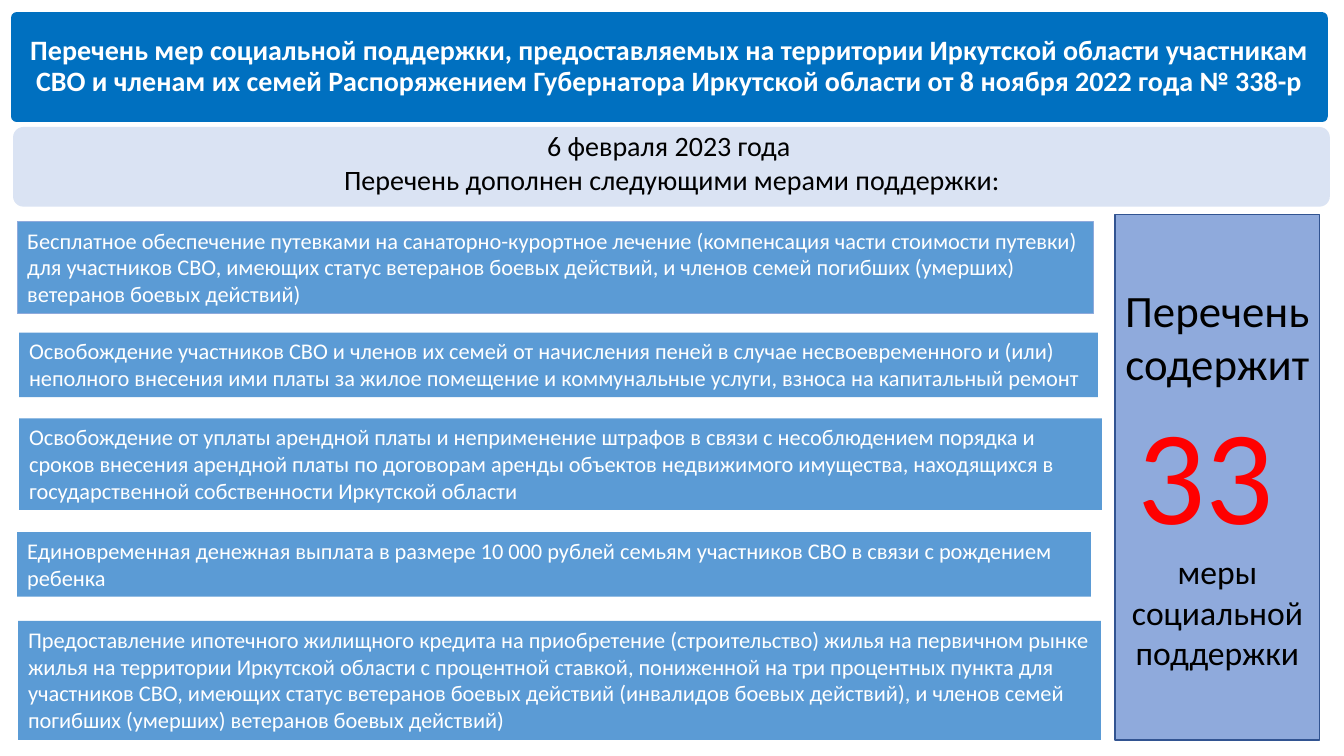
import pptx
import pptx.dml.color
import pptx.enum.shapes
import pptx.enum.text
import pptx.util

RGBColor = pptx.dml.color.RGBColor
Pt = pptx.util.Pt
MSO_SHAPE = pptx.enum.shapes.MSO_SHAPE
ANCHOR = pptx.enum.text.MSO_ANCHOR
ALIGN = pptx.enum.text.PP_ALIGN

PX = 9144  # 100 px to the inch
WHITE = RGBColor(0xFF, 0xFF, 0xFF)
BLACK = RGBColor(0x00, 0x00, 0x00)
RED = RGBColor(0xFF, 0x00, 0x00)
TITLE_BLUE = RGBColor(0x00, 0x70, 0xC0)
PALE_BLUE = RGBColor(0xDA, 0xE3, 0xF3)
MEASURE_BLUE = RGBColor(0x5B, 0x9B, 0xD5)
PANEL_BLUE = RGBColor(0x8F, 0xAA, 0xDC)
PANEL_EDGE = RGBColor(0x32, 0x54, 0x91)


def add_box(kind, box, fill, anchor=ANCHOR.TOP):
    sp = s.shapes.add_shape(kind, *[v * PX for v in box])
    sp.shadow.inherit = False
    sp.fill.solid()
    sp.fill.fore_color.rgb = fill
    sp.line.fill.background()
    sp.text_frame.word_wrap = True
    sp.text_frame.vertical_anchor = anchor
    return sp


def style(p, size, color, align, bold=False):
    p.alignment = align
    p.font.name = "Calibri"
    p.font.size = Pt(size)
    p.font.bold = bold
    p.font.color.rgb = color


prs = pptx.Presentation()
prs.slide_width, prs.slide_height = 1333 * PX, 750 * PX
s = prs.slides.add_slide(prs.slide_layouts[6])

# Title
sp = add_box(MSO_SHAPE.ROUNDED_RECTANGLE, (11, 12, 1306, 109), TITLE_BLUE, ANCHOR.MIDDLE)
sp.adjustments[0] = 0.05
p = sp.text_frame.paragraphs[0]
p.text = (
    "Перечень мер социальной поддержки, предоставляемых на территории Иркутской "
    "области участникам СВО и членам их семей Распоряжением Губернатора Иркутской "
    "области от 8 ноября 2022 года № 338-р"
)
p.line_spacing = 0.9
style(p, 20, WHITE, ALIGN.CENTER, bold=True)

# Date band and its caption
sp = add_box(MSO_SHAPE.ROUNDED_RECTANGLE, (13, 126, 1306, 79), PALE_BLUE)
sp.adjustments[0] = 0.13
sp = s.shapes.add_textbox(0, 123 * PX, 1333 * PX, 77 * PX)
sp.text_frame.word_wrap = True
p = sp.text_frame.paragraphs[0]
p.text = "6 февраля 2023 года \vПеречень дополнен следующими мерами поддержки:"
style(p, 20, BLACK, ALIGN.CENTER)

# Added measures
measures = [
    ((17, 220, 1068, 91),
     "Бесплатное обеспечение путевками на санаторно-курортное лечение (компенсация "
     "части стоимости путевки) для участников СВО, имеющих статус ветеранов боевых "
     "действий, и членов семей погибших (умерших) ветеранов боевых действий)"),
    ((19, 330, 1070, 64),
     "Освобождение участников СВО и членов их семей от начисления пеней в случае "
     "несвоевременного и (или) неполного внесения ими платы за жилое помещение и "
     "коммунальные услуги, взноса на капитальный ремонт"),
    ((19, 415, 1074, 91),
     "Освобождение от уплаты арендной платы и неприменение штрафов в связи с "
     "несоблюдением порядка и сроков внесения арендной платы по договорам аренды "
     "объектов недвижимого имущества, находящихся в государственной собственности "
     "Иркутской области"),
    ((17, 528, 1065, 64),
     "Единовременная денежная выплата в размере 10 000 рублей семьям участников СВО "
     "в связи с рождением ребенка"),
    ((18, 616, 1074, 118),
     "Предоставление ипотечного жилищного кредита на приобретение (строительство) "
     "жилья на первичном рынке жилья на территории Иркутской области с процентной "
     "ставкой, пониженной на три процентных пункта для участников СВО, имеющих статус "
     "ветеранов боевых действий (инвалидов боевых действий), и членов семей погибших "
     "(умерших) ветеранов боевых действий)"),
]
for i, (box, text) in enumerate(measures):
    sp = add_box(MSO_SHAPE.RECTANGLE, box, MEASURE_BLUE)
    if i == 0:
        sp.line.color.rgb = PANEL_BLUE
        sp.line.width = Pt(0.75)
    p = sp.text_frame.paragraphs[0]
    p.text = text
    style(p, 16, WHITE, ALIGN.LEFT)

# Total panel
sp = add_box(MSO_SHAPE.RECTANGLE, (1106, 213, 203, 521), PANEL_BLUE, ANCHOR.MIDDLE)
sp.line.color.rgb = PANEL_EDGE
sp.line.width = Pt(1)
tf = sp.text_frame
p = tf.paragraphs[0]
style(p, 32, BLACK, ALIGN.CENTER)
for text, size, color in [("Перечень содержит ", 32, BLACK), ("33", 96, RED), (" ", 72, RED)]:
    r = p.add_run()
    r.text = text
    r.font.size = Pt(size)
    r.font.color.rgb = color
p = tf.add_paragraph()
p.text = "меры социальной поддержки"
style(p, 24, BLACK, ALIGN.CENTER)

prs.save("out.pptx")
